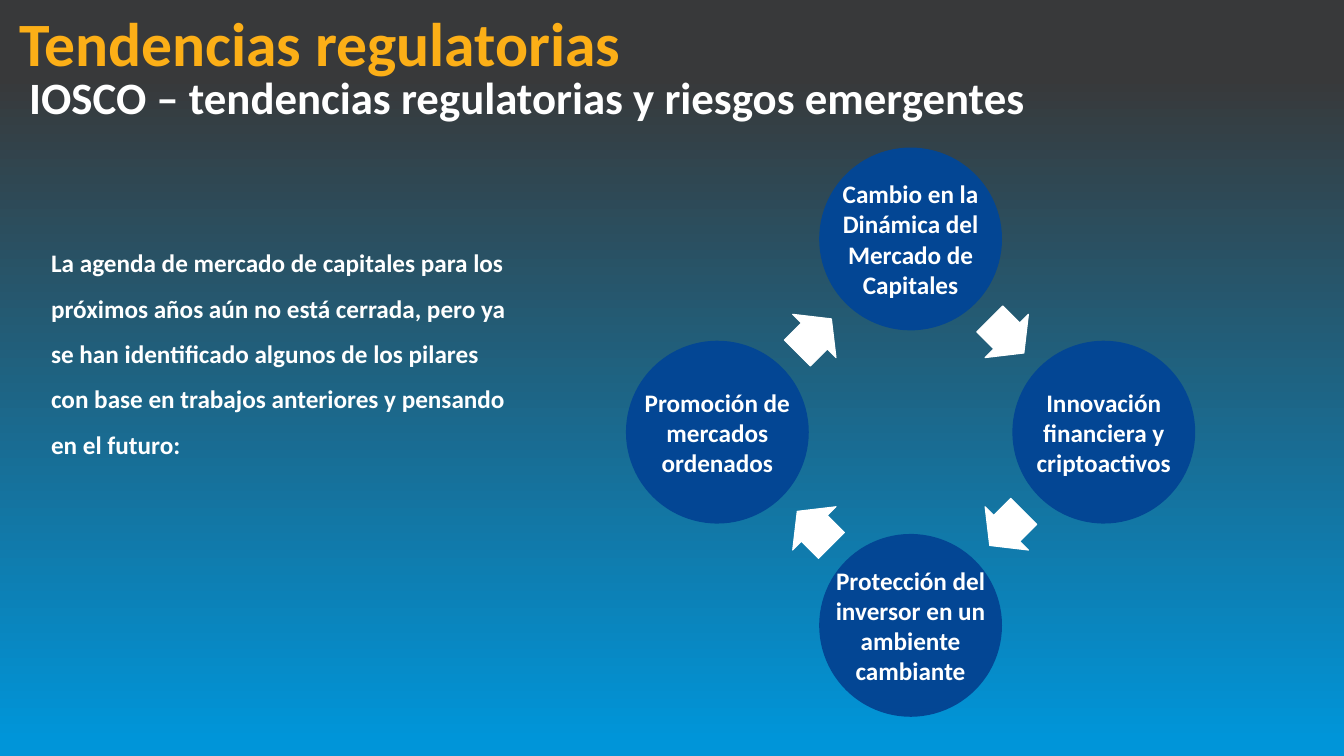
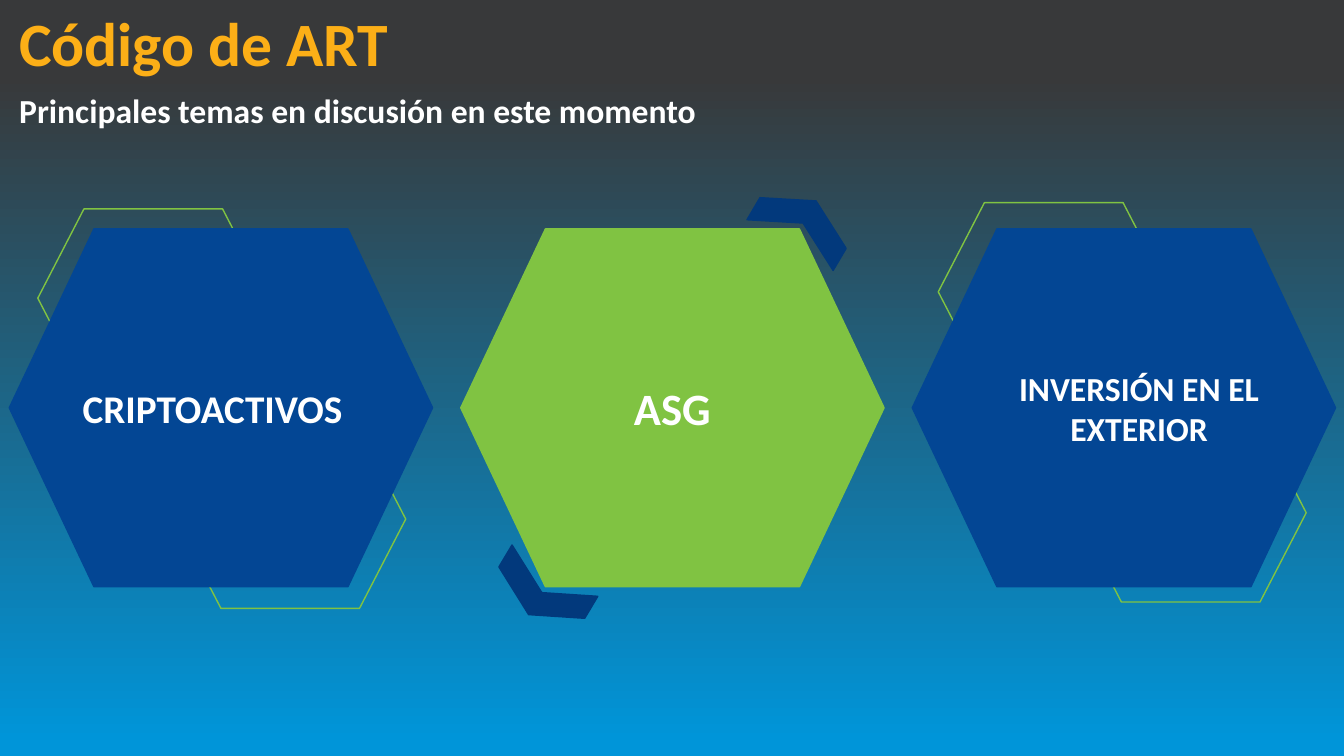
from dataclasses import dataclass
from math import cos, radians, sin

from pptx import Presentation
from pptx.dml.color import RGBColor
from pptx.enum.shapes import MSO_SHAPE
from pptx.enum.text import MSO_ANCHOR, PP_ALIGN
from pptx.util import Inches, Pt

COLUMNS, ROWS = 32, 18


@dataclass(frozen=True)
class Theme:
    font: str = "Calibri"
    night: str = "38393A"
    sky: str = "0095D9"
    gold: str = "FCAF17"
    white: str = "FFFFFF"
    blue: str = "034694"
    navy: str = "02397C"
    green: str = "80C342"
    title: int = 44
    heading: int = 32
    large: int = 28
    subtitle: int = 24
    body: int = 18


THEME = Theme()


def write_text(frame, text, *, size=THEME.body, color=THEME.white,
               align=PP_ALIGN.LEFT, anchor=MSO_ANCHOR.TOP, wrap=True,
               line_spacing=None, space_after=None):
    """Fill a text frame with one bold paragraph."""
    frame.word_wrap = wrap
    frame.vertical_anchor = anchor
    paragraph = frame.paragraphs[0]
    paragraph.alignment = align
    paragraph.line_spacing = line_spacing
    paragraph.space_after = space_after
    run = paragraph.add_run()
    run.text = text
    run.font.name = THEME.font
    run.font.size = Pt(size)
    run.font.bold = True
    run.font.color.rgb = RGBColor.from_string(color)


class Deck:
    """Holds the presentation, its style and the current slide."""

    def __init__(self):
        self.presentation = Presentation()
        self.presentation.slide_width = Inches(13.33)
        self.presentation.slide_height = Inches(7.5)
        self.slide = None
        self.paint_background()

    def paint_background(self):
        fill = self.presentation.slide_master.background.fill
        fill.gradient()
        fill.gradient_angle = 270
        stops = ((0.1, THEME.night), (0.98, THEME.sky))
        for stop, (position, color) in zip(fill.gradient_stops, stops):
            stop.position = position
            stop.color.rgb = RGBColor.from_string(color)

    def cells(self, left, top, width, height):
        """Turn grid columns and rows into slide lengths."""
        column = self.presentation.slide_width / COLUMNS
        row = self.presentation.slide_height / ROWS
        return (round(left * column), round(top * row),
                round(width * column), round(height * row))

    def new_slide(self, title):
        layout = self.presentation.slide_layouts[6]
        self.slide = self.presentation.slides.add_slide(layout)
        self.text(title, 0.22, 0.19, 31.08, 1.63, size=THEME.title,
                  color=THEME.gold, anchor=MSO_ANCHOR.MIDDLE)

    def text(self, text, left, top, width, height, **style):
        box = self.slide.shapes.add_textbox(
            *self.cells(left, top, width, height))
        write_text(box.text_frame, text, **style)

    def label(self, text, center_x, center_y, width, height, **style):
        self.text(text, center_x - width / 2, center_y - height / 2,
                  width, height, align=PP_ALIGN.CENTER,
                  anchor=MSO_ANCHOR.MIDDLE, **style)

    def shape(self, kind, center_x, center_y, width, height, *, line,
              fill=None, weight=1, rotation=0, adjustments=()):
        shape = self.slide.shapes.add_shape(kind, *self.cells(
            center_x - width / 2, center_y - height / 2, width, height))
        shape.shadow.inherit = False
        shape.rotation = rotation
        for index, value in enumerate(adjustments):
            shape.adjustments[index] = value
        if fill:
            shape.fill.solid()
            shape.fill.fore_color.rgb = RGBColor.from_string(fill)
        else:
            shape.fill.background()
        shape.line.color.rgb = RGBColor.from_string(line)
        shape.line.width = Pt(weight)


def on_ring(center, radius, angle):
    """Point at a clockwise angle, in degrees, from the right."""
    turn = radians(angle)
    return center[0] + radius * cos(turn), center[1] + radius * sin(turn)


def build_trends(deck):
    deck.new_slide("Tendencias regulatorias")
    deck.text("IOSCO – tendencias regulatorias y riesgos emergentes",
              0.46, 2.21, 29.14, 0.98, size=THEME.heading,
              line_spacing=Pt(18))

    # Cycle of pillars, clockwise from the top
    cycle_center = (21.68, 10.29)
    pillars = (
        "Cambio en la Dinámica del Mercado de Capitales",
        "Innovación financiera y criptoactivos",
        "Protección del inversor en un ambiente cambiante",
        "Promoción de mercados ordenados",
    )
    step = 360 / len(pillars)
    for index, pillar in enumerate(pillars):
        angle = index * step - 90
        spot = on_ring(cycle_center, 4.6, angle)
        deck.shape(MSO_SHAPE.OVAL, *spot, 4.32, 4.32,
                   fill=THEME.blue, line=THEME.blue)
        deck.label(pillar, *spot, 4.8, 3.14)
        halfway = angle + step / 2
        deck.shape(MSO_SHAPE.RIGHT_ARROW,
                   *on_ring(cycle_center, 3.24, halfway), 1.15, 1.46,
                   fill=THEME.white, line=THEME.white, weight=0.75,
                   rotation=halfway + 90, adjustments=(0.6, 0.5))

    # Introduction
    deck.text("La agenda de mercado de capitales para los próximos años "
              "aún no está cerrada, pero ya se han identificado algunos de "
              "los pilares con base en trabajos anteriores y pensando en el "
              "futuro:", 0.98, 5.42, 11.45, 5.59,
              line_spacing=1.5, space_after=Pt(10))


def build_topics(deck):
    deck.new_slide("Código de ART")
    deck.text("Principales temas en discusión en este momento",
              0.22, 2.02, 17, 1.2, size=THEME.subtitle, wrap=False)

    hexagon = MSO_SHAPE.FLOWCHART_PREPARATION
    middle_x, middle_y, pitch = 16.01, 9.71, 10.75

    # Outlines behind the outer hexagons
    for side, shift_x, shift_y in ((-1, 0.02, 0.02), (1, -0.04, -0.13)):
        for end in (-1, 1):
            deck.shape(hexagon,
                       middle_x + side * pitch + shift_x + end * 1.63,
                       middle_y + shift_y + end * 2.63,
                       5.5, 4.25, line=THEME.green)

    # Topics: text, colour, type size, label shift
    topics = (
        ("CRIPTOACTIVOS", THEME.blue, THEME.large, -0.2),
        ("ASG", THEME.green, THEME.heading, 0),
        ("INVERSIÓN EN EL EXTERIOR", THEME.blue, THEME.subtitle, 0.36),
    )
    for side, (topic, color, size, shift) in enumerate(topics, start=-1):
        x = middle_x + side * pitch
        deck.shape(hexagon, x, middle_y, 10.08, 8.52,
                   fill=color, line=color)
        deck.label(topic, x + shift, middle_y, 8.35, 2.18, size=size)

    # Chevrons on opposite corners of the middle hexagon
    for end, rotation in ((-1, 120.9), (1, 300.5)):
        deck.shape(MSO_SHAPE.CHEVRON, middle_x + end * 3.11,
                   middle_y - end * 4.4, 1.22, 2.38,
                   fill=THEME.navy, line=THEME.navy, rotation=rotation)


def main():
    deck = Deck()
    build_trends(deck)
    build_topics(deck)
    deck.presentation.save("out.pptx")


if __name__ == "__main__":
    main()
